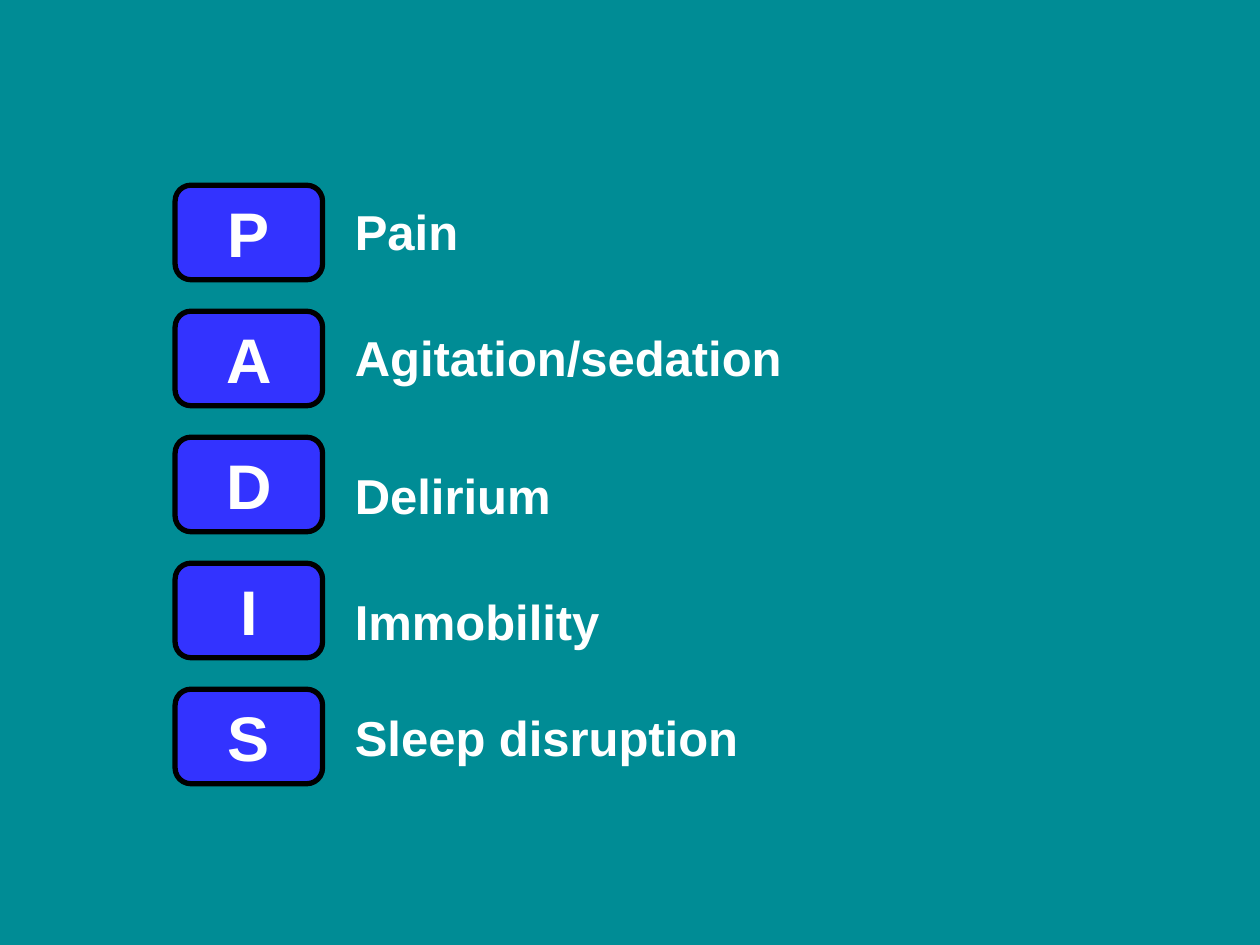
import pptx
import pptx.util
import pptx.dml.color
import pptx.enum.shapes
import pptx.enum.text

Inches = pptx.util.Inches
COLORS = {"background": "008C95", "badge": "3333FF", "outline": "000000", "text": "FFFFFF"}


def rgb(name):
    return pptx.dml.color.RGBColor.from_string(COLORS[name])


def add_box(s, left, top, width, height, text, size, align):
    sp = s.shapes.add_shape(
        pptx.enum.shapes.MSO_SHAPE.ROUNDED_RECTANGLE,
        Inches(left), Inches(top), Inches(width), Inches(height))
    sp.shadow.inherit = False
    tf = sp.text_frame
    tf.word_wrap = True
    tf.vertical_anchor = pptx.enum.text.MSO_ANCHOR.MIDDLE
    p = tf.paragraphs[0]
    p.alignment = align
    r = p.add_run()
    r.text = text
    r.font.name = "Arial"
    r.font.size = pptx.util.Pt(size)
    r.font.bold = True
    r.font.color.rgb = rgb("text")
    return sp


prs = pptx.Presentation()
prs.slide_width, prs.slide_height = Inches(10), Inches(7.5)
s = prs.slides.add_slide(prs.slide_layouts[6])

# Background
s.background.fill.solid()
s.background.fill.fore_color.rgb = rgb("background")

# One row per letter: badge and its meaning, with the label's top
rows = [
    ("P", "Pain", 1.54),
    ("A", "Agitation/sedation", 2.54),
    ("D", "Delirium", 3.64),
    ("I", "Immobility", 4.64),
    ("S", "Sleep disruption", 5.56),
]
for i, (letter, meaning, label_top) in enumerate(rows):
    badge = add_box(s, 1.39, 1.47 + i, 1.17, 0.75, letter, 36,
                    pptx.enum.text.PP_ALIGN.CENTER)
    badge.fill.solid()
    badge.fill.fore_color.rgb = rgb("badge")
    badge.line.color.rgb = rgb("outline")
    badge.line.width = pptx.util.Pt(3)

    label = add_box(s, 2.69, label_top, 7.67, 0.58, meaning, 28,
                    pptx.enum.text.PP_ALIGN.LEFT)
    label.fill.background()
    label.line.fill.background()

prs.save("out.pptx")
